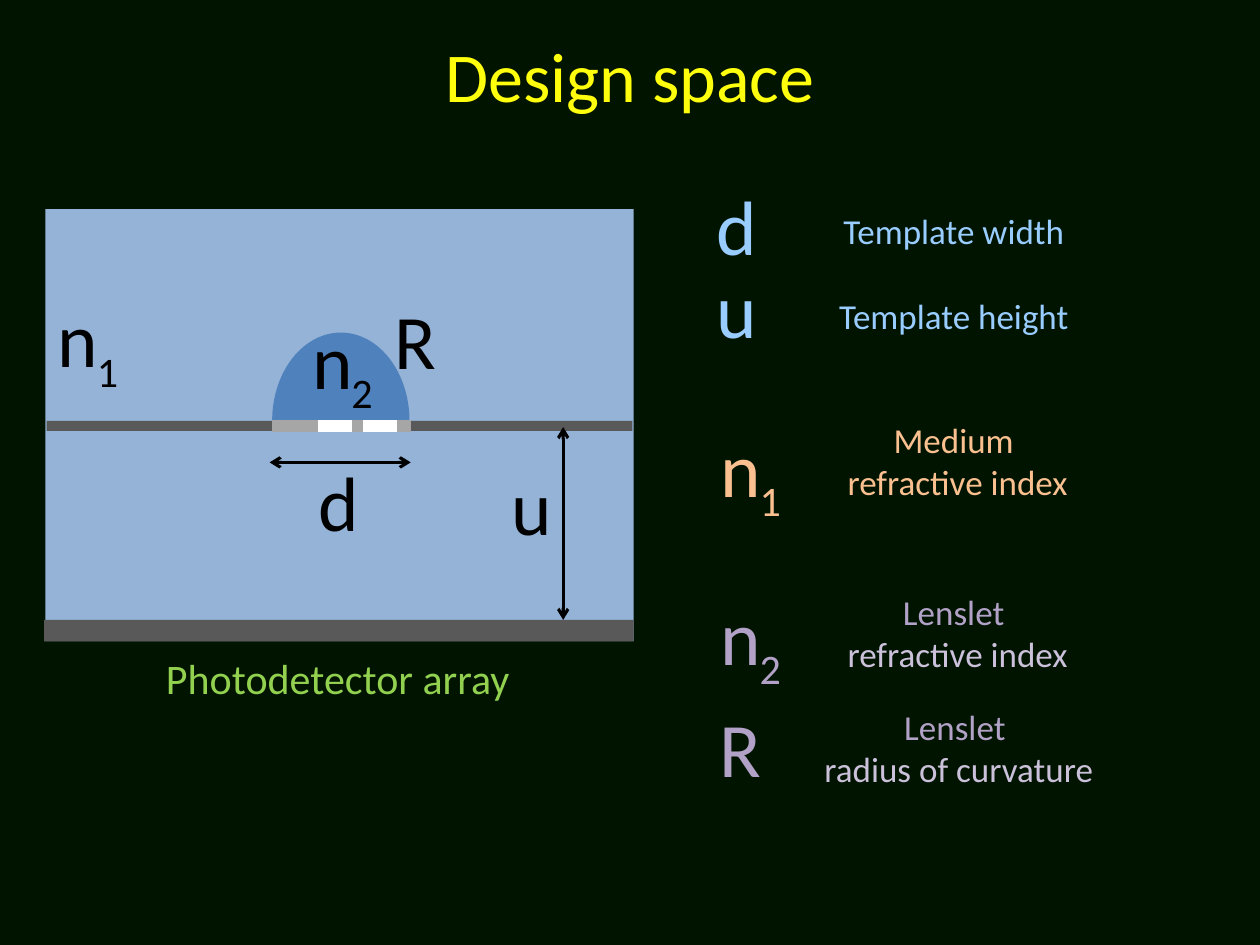
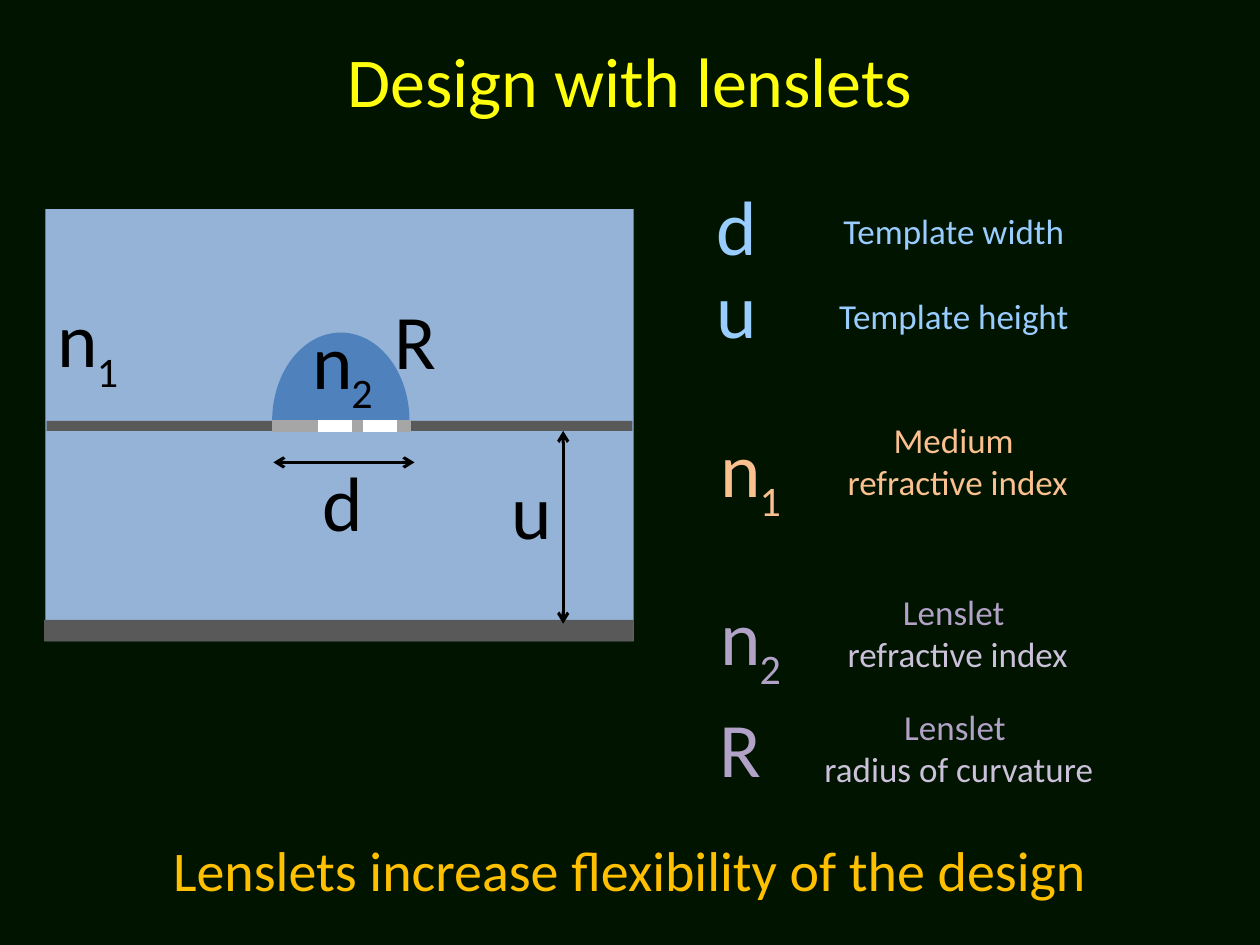
from dataclasses import dataclass

from pptx import Presentation
from pptx.dml.color import RGBColor as Rgb
from pptx.enum.dml import MSO_LINE as Dash
from pptx.enum.shapes import MSO_CONNECTOR as Conn, MSO_SHAPE as Form
from pptx.enum.text import MSO_ANCHOR as Anchor, MSO_AUTO_SIZE as Fit, PP_ALIGN as Align
from pptx.oxml.ns import qn
from pptx.oxml.xmlchemy import OxmlElement as Node
from pptx.shapes.autoshape import Shape
from pptx.shapes.connector import Connector
from pptx.slide import Slide
from pptx.util import Inches, Pt


# Theme: colours, font and type sizes
@dataclass(frozen=True)
class Theme:
    font: str = "Calibri"
    back: str = "001400"
    title: str = "FFFF0D"
    size: str = "99CCFF"
    medium: str = "FAC090"
    lens: str = "B3A2C7"
    pale: str = "CCC1DA"
    array: str = "92D050"
    claim: str = "FFC000"
    ink: str = "000000"
    water: str = "95B3D7"
    dome: str = "4F81BD"
    wall: str = "595959"
    gap: str = "FFFFFF"
    grid: str = "A6A6A6"
    title_pt: int = 40
    claim_pt: int = 32
    letter_pt: int = 44
    small_pt: int = 24
    note_pt: int = 20


THEME = Theme()


@dataclass(frozen=True)
class Box:
    left: float
    top: float
    width: float
    height: float

    def emu(self) -> tuple[int, ...]:
        return tuple(Inches(v) for v in (self.left, self.top, self.width, self.height))


@dataclass(frozen=True)
class Symbol:
    left: float
    top: float
    text: str
    color: str = THEME.ink
    sub: str = ""


@dataclass(frozen=True)
class Note:
    box: Box
    lines: tuple[tuple[str, str], ...]  # text and colour


@dataclass(frozen=True)
class Page:
    title: str
    top: float
    anchor: Anchor
    shift: float  # offset of the dimension arrows
    foot: Note
    foot_pt: int


SYMBOLS = (
    Symbol(5.59, 1.37, "d", THEME.size),
    Symbol(5.59, 2.03, "u", THEME.size),
    Symbol(5.62, 3.29, "n", THEME.medium, "1"),
    Symbol(5.62, 4.62, "n", THEME.lens, "2"),
    Symbol(5.61, 5.51, "R", THEME.lens),
)
NOTES = (
    Note(Box(6.41, 1.61, 2.32, 0.44), (("Template width", THEME.size),)),
    Note(Box(6.41, 2.29, 2.32, 0.44), (("Template height", THEME.size),)),
    Note(Box(6.44, 3.27, 2.32, 0.77),
         (("Medium ", THEME.medium), ("refractive index", THEME.medium))),
    Note(Box(6.44, 4.64, 2.32, 0.77),
         (("Lenslet ", THEME.lens), ("refractive index", THEME.pale))),
    Note(Box(6.3, 5.55, 2.62, 0.77),
         (("Lenslet ", THEME.lens), ("radius of curvature", THEME.pale))),
)
LABELS = (
    Symbol(0.36, 2.26, "n", sub="1"),
    Symbol(2.38, 2.43, "n", sub="2"),
    Symbol(3.03, 2.27, "R"),
)
PAGES = (
    Page("Design space", 0.21, Anchor.TOP, 0,
         Note(Box(1.02, 5.13, 3.32, 0.5), (("Photodetector array", THEME.array),)),
         THEME.small_pt),
    Page("Design with lenslets", 0.01, Anchor.MIDDLE, 0.03,
         Note(Box(0, 6.58, 10, 0.64),
              (("Lenslets increase flexibility of the design", THEME.claim),)),
         THEME.claim_pt),
)


# Text
def add_text(slide: Slide, note: Note, size: int, align: Align = Align.CENTER,
             wrap: bool = True, fit: Fit = Fit.SHAPE_TO_FIT_TEXT,
             anchor: Anchor = Anchor.TOP) -> None:
    frame = slide.shapes.add_textbox(*note.box.emu()).text_frame
    look = {"word_wrap": wrap, "auto_size": fit, "vertical_anchor": anchor}
    for key, value in look.items():
        setattr(frame, key, value)
    for i, (text, color) in enumerate(note.lines):
        para = frame.add_paragraph() if i else frame.paragraphs[0]
        para.alignment = align
        run = para.add_run()
        run.text = text
        for key, value in {"name": THEME.font, "size": Pt(size)}.items():
            setattr(run.font, key, value)
        run.font.color.rgb = Rgb.from_string(color)


def add_symbol(slide: Slide, sym: Symbol) -> None:
    parts = [(sym.text, Box(sym.left, sym.top, 0.53, 0.84), THEME.letter_pt)]
    if sym.sub:
        parts.append((sym.sub, Box(sym.left + 0.31, sym.top + 0.43, 0.37, 0.5),
                      THEME.small_pt))
    for text, box, size in parts:
        add_text(slide, Note(box, ((text, sym.color),)), size, Align.LEFT, wrap=False)


# Shapes and lines
def add_form(slide: Slide, box: Box, color: str, form: Form = Form.RECTANGLE) -> Shape:
    shape = slide.shapes.add_shape(form, *box.emu())
    shape.shadow.inherit = False
    shape.fill.solid()
    shape.fill.fore_color.rgb = Rgb.from_string(color)
    shape.line.fill.background()
    return shape


def add_line(slide: Slide, start: tuple[float, float], end: tuple[float, float],
             color: str, width: float, arrows: bool = False) -> Connector:
    line = slide.shapes.add_connector(
        Conn.STRAIGHT, *(Inches(v) for v in (*start, *end)))
    line.line.color.rgb = Rgb.from_string(color)
    line.line.width = Pt(width)
    props = line.element.spPr
    if arrows:
        for tag in ("a:headEnd", "a:tailEnd"):
            tip = Node(tag)
            tip.set("type", "arrow")
            props.find(qn("a:ln")).append(tip)
    props.append(Node("a:effectLst"))
    return line


# Lenslet cross-section
def draw_cell(slide: Slide, shift: float) -> None:
    add_form(slide, Box(0.36, 1.66, 4.67, 3.43), THEME.water)
    dome = add_form(slide, Box(2.16, 2.64, 1.09, 1.4), THEME.dome, Form.PIE)
    dome.adjustments[0] = 108.2
    dome.adjustments[1] = 216
    add_form(slide, Box(0.35, 4.92, 4.68, 0.17), THEME.wall)
    left = add_form(slide, Box(0.37, 3.34, 1.79, 0.08), THEME.wall)
    right = add_form(slide, Box(3.26, 3.34, 1.76, 0.08), THEME.wall)

    # Template: a dashed grid over a white line, between the two walls
    for color, dash in ((THEME.gap, Dash.SOLID), (THEME.grid, Dash.DASH_DOT)):
        line = add_line(slide, (2.16, 3.37), (3.26, 3.37), color, 6.5)
        line.line.dash_style = dash
        line.begin_connect(left, 3)
        line.end_connect(right, 1)

    # Dimensions d and u
    add_line(slide, (2.14 + shift, 3.67), (3.26 + shift, 3.67), THEME.ink, 1.75, True)
    add_line(slide, (4.47, 3.39 + shift), (4.47, 4.92 + shift), THEME.ink, 1.75, True)
    sizes = (Symbol(2.43 + shift, 3.56, "d"), Symbol(3.96, 3.59 + shift, "u"))
    for sym in LABELS + sizes:
        add_symbol(slide, sym)


def draw_key(slide: Slide) -> None:
    for sym in SYMBOLS:
        add_symbol(slide, sym)
    for note in NOTES:
        add_text(slide, note, THEME.note_pt)


def draw_page(slide: Slide, page: Page) -> None:
    fill = slide.background.fill
    fill.solid()
    fill.fore_color.rgb = Rgb.from_string(THEME.back)
    head = Note(Box(0, page.top, 10, 1.25), ((page.title, THEME.title),))
    add_text(slide, head, THEME.title_pt, fit=Fit.NONE, anchor=page.anchor)
    draw_cell(slide, page.shift)
    draw_key(slide)
    add_text(slide, page.foot, page.foot_pt)


def main() -> None:
    deck = Presentation()
    deck.slide_width, deck.slide_height = Inches(10), Inches(7.5)
    for page in PAGES:
        draw_page(deck.slides.add_slide(deck.slide_layouts[6]), page)
    deck.save("out.pptx")


if __name__ == "__main__":
    main()
